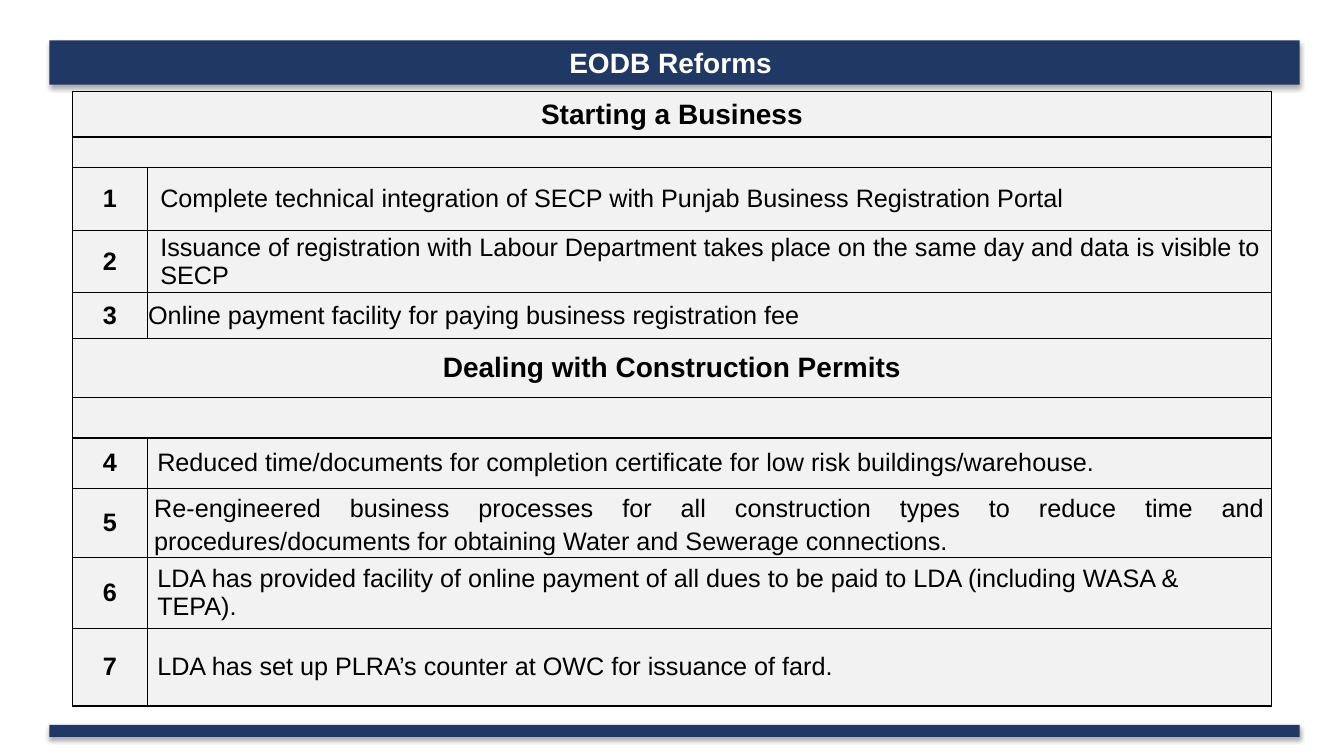
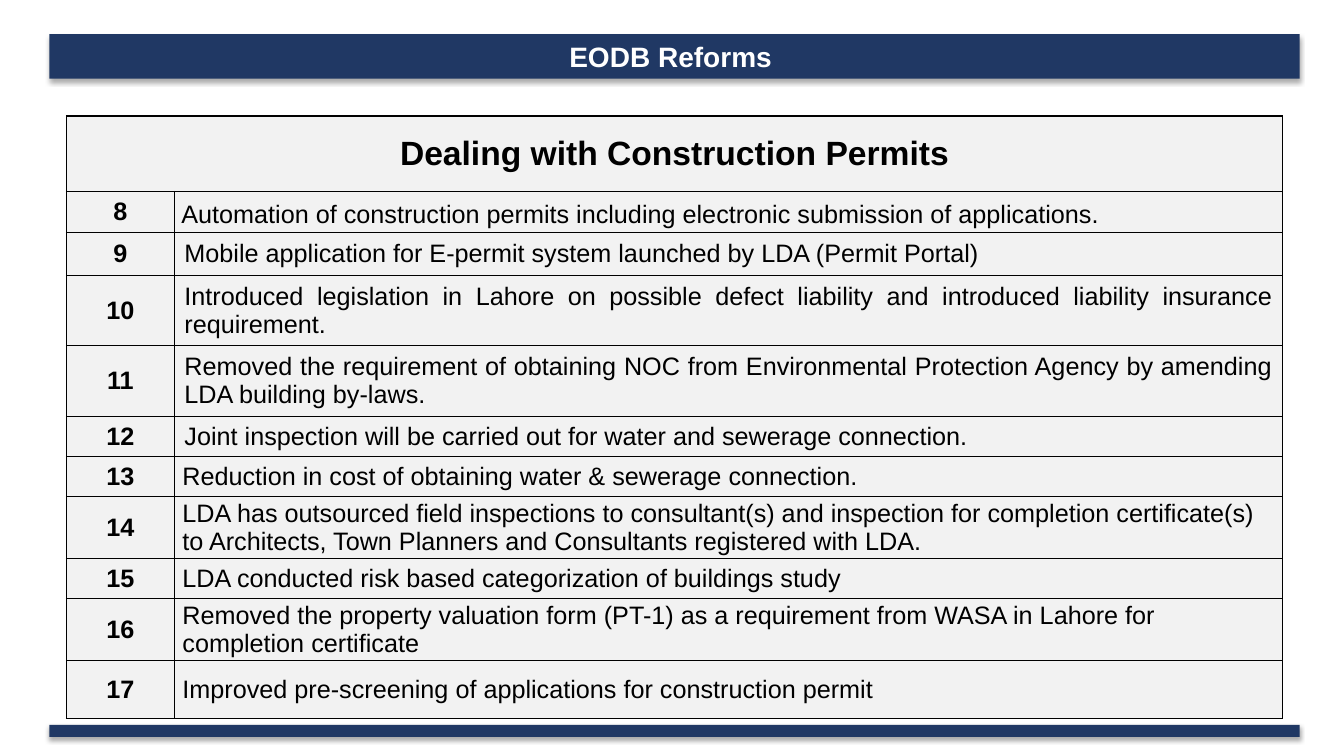
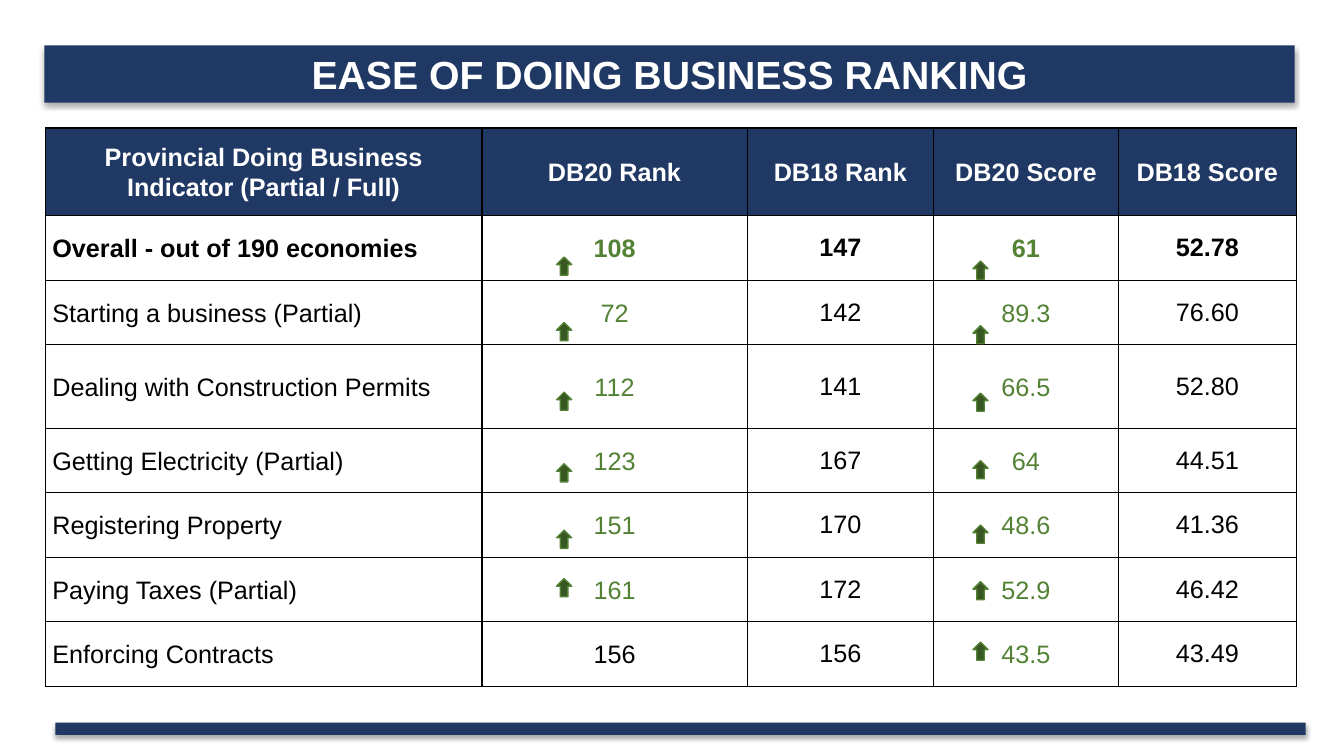
from lxml import etree
from pptx import Presentation
from pptx.dml.color import RGBColor
from pptx.enum import shapes, text
from pptx.oxml import parse_xml
from pptx.oxml.ns import nsdecls
from pptx.util import Inches, Pt

NAVY = RGBColor(0x20, 0x38, 0x64)
GREY = RGBColor(0xF2, 0xF2, 0xF2)
GREEN = RGBColor(0x54, 0x82, 0x35)
DARK = RGBColor(0x38, 0x57, 0x23)
WHITE = RGBColor(0xFF, 0xFF, 0xFF)
BLACK = RGBColor(0, 0, 0)
FONT = "Arial"
BAND_W = 12.4

LEFT, MID, JUST = text.PP_ALIGN.LEFT, text.PP_ALIGN.CENTER, text.PP_ALIGN.JUSTIFY

# Cell styles: left inset, right inset, alignment, line spacing
PLAIN = (0.1, 0.1, LEFT, 1.0)
FULL = (0.1, 0.1, JUST, 1.0)
LOOSE = (0.07, 0.07, JUST, 1.15)
DEEP = (0.13, 0.01, LEFT, 1.0)
FLUSH = (0.01, 0.01, LEFT, 1.0)
SLIM = (0.08, 0.01, LEFT, 1.0)
NUMBER = (0.1, 0.1, MID, 1.0)
HEAD = (0.05, 0.05, MID, 1.0)
LABEL = (0.07, 0.07, LEFT, 1.07)
VALUE = (0.07, 0.07, MID, 1.07)

# Rows: height, then a heading, nothing, or a reform with its style
STARTING = [
    (0.45, "Starting a Business"),
    (0.3,),
    (0.62, "Complete technical integration of SECP with Punjab Business Registration Portal", DEEP),
    (0.62, "Issuance of registration with Labour Department takes place on the same day "
           "and data is visible to SECP", DEEP),
    (0.45, "Online payment facility for paying business registration fee", FLUSH),
    (0.59, "Dealing with Construction Permits"),
    (0.4,),
    (0.5, "Reduced time/documents for completion certificate for low risk "
          "buildings/warehouse.", PLAIN),
    (0.69, "Re-engineered business processes for all construction types to reduce time and "
           "procedures/documents for obtaining Water and Sewerage connections.", LOOSE),
    (0.7, "LDA has provided facility of online payment of all dues to be paid to LDA "
          "(including WASA & TEPA).", PLAIN),
    (0.77, "LDA has set up PLRA’s counter at OWC for issuance of fard.", PLAIN),
]
PERMITS = [
    (0.75, "Dealing with Construction Permits"),
    (0.41, "Automation of construction permits including electronic submission of "
           "applications.", LOOSE),
    (0.42, "Mobile application for E-permit system launched by LDA (Permit Portal)", PLAIN),
    (0.7, "Introduced legislation in Lahore on possible defect liability and introduced "
          "liability insurance requirement.", FULL),
    (0.7, "Removed the requirement of obtaining NOC from Environmental Protection Agency "
          "by amending LDA building by-laws.", FULL),
    (0.4, "Joint inspection will be carried out for water and sewerage connection.", FULL),
    (0.4, "Reduction in cost of obtaining water & sewerage connection.", SLIM),
    (0.61, "LDA has outsourced field inspections to consultant(s) and inspection for completion "
           "certificate(s) to Architects, Town Planners and Consultants registered with LDA.", SLIM),
    (0.4, "LDA conducted risk based categorization of buildings study", SLIM),
    (0.61, "Removed the property valuation form (PT-1) as a requirement from WASA in Lahore "
           "for completion certificate", SLIM),
    (0.58, "Improved pre-screening of applications for construction permit", SLIM),
]
RANKING = [
    ("Provincial Doing Business Indicator (Partial / Full)",
     "DB20 Rank", "DB18 Rank", "DB20 Score", "DB18 Score"),
    ("Overall - out of 190 economies", "108", "147", "61", "52.78"),
    ("Starting a business (Partial)", "72", "142", "89.3", "76.60"),
    ("Dealing with Construction Permits", "112", "141", "66.5", "52.80"),
    ("Getting Electricity (Partial)", "123", "167", "64", "44.51"),
    ("Registering Property", "151", "170", "48.6", "41.36"),
    ("Paying Taxes (Partial)", "161", "172", "52.9", "46.42"),
    ("Enforcing Contracts", "156", "156", "43.5", "43.49"),
]
ARROWS = {
    5.52: [2.55, 3.2, 3.89, 4.6, 5.26, 5.74],
    9.65: [2.59, 3.23, 3.9, 4.57, 5.21, 5.77, 6.37],
}


def write(para, words, size, color, bold):
    run = para.add_run()
    run.text = words
    font = run.font
    font.name, font.size, font.bold = FONT, Pt(size), bold
    font.color.rgb = color


def band(slide, left, top, height):
    """Add a navy bar with a soft shadow below it."""
    bar = slide.shapes.add_shape(shapes.MSO_SHAPE.RECTANGLE, Inches(left), Inches(top),
                                 Inches(BAND_W), Inches(height))
    bar.fill.solid()
    bar.fill.fore_color.rgb = NAVY
    bar.line.fill.background()
    bar.shadow.inherit = False
    glow = parse_xml(
        f'<a:outerShdw {nsdecls("a")} blurRad="{Pt(3.5)}" dist="{Pt(2.2)}" dir="5400000" '
        'rotWithShape="0"><a:srgbClr val="000000"><a:alpha val="32000"/></a:srgbClr></a:outerShdw>')
    bar.element.spPr.find("{*}effectLst").append(glow)
    return bar


def title(slide, words, left, top, height, size):
    frame = band(slide, left, top, height).text_frame
    frame.word_wrap = True
    frame.vertical_anchor = text.MSO_ANCHOR.MIDDLE
    para = frame.paragraphs[0]
    para.alignment = MID
    write(para, words, size, WHITE, True)


def border(cell):
    props = cell._tc.get_or_add_tcPr()
    for i, side in enumerate("LRTB"):
        line = parse_xml(f'<a:ln{side} {nsdecls("a")} w="{Pt(1)}"><a:solidFill>'
                         f'<a:srgbClr val="{BLACK}"/></a:solidFill></a:ln{side}>')
        props.insert(i, line)


def grid(slide, left, top, cols, rows):
    """Add a bordered table without fill from column widths and row heights."""
    frame = slide.shapes.add_table(len(rows), len(cols), Inches(left), Inches(top),
                                   Inches(sum(cols)), Inches(sum(rows)))
    table = frame.table
    table.first_row = table.horz_banding = False
    for col, width in zip(table.columns, cols):
        col.width = Inches(width)
    for row, height in zip(table.rows, rows):
        row.height = Inches(height)
    for cell in table.iter_cells():
        cell.fill.background()
        cell.margin_top = cell.margin_bottom = 0
        cell.vertical_anchor = text.MSO_ANCHOR.MIDDLE
        border(cell)
    return table


def paint(cell, color):
    cell.fill.solid()
    cell.fill.fore_color.rgb = color


def fill(cell, words, style, size=18, color=BLACK, bold=False):
    """Write words into a cell in one of the cell styles."""
    left, right, align, space = style
    cell.margin_left, cell.margin_right = Inches(left), Inches(right)
    para = cell.text_frame.paragraphs[0]
    para.alignment, para.line_spacing = align, space
    write(para, words, size, color, bold)


def reforms(slide, left, top, cols, rows, first, size):
    """Add a table of reforms, numbered from first, under headings."""
    table = grid(slide, left, top, cols, [row[0] for row in rows])
    for cell in table.iter_cells():
        paint(cell, GREY)
    count = first
    for i, (_, *parts) in enumerate(rows):
        start, end = table.cell(i, 0), table.cell(i, 1)
        if len(parts) == 2:
            fill(start, str(count), NUMBER, bold=True)
            fill(end, *parts)
            count += 1
            continue
        start.merge(end)
        if parts:
            fill(start, parts[0], HEAD, size, bold=True)


def ranking(slide):
    heights = [0.87, 0.64, 0.64, 0.83] + [0.64] * 4
    table = grid(slide, 0.45, 1.27, [4.33, 2.63, 1.85, 1.83, 1.77], heights)
    for i, row in enumerate(RANKING):
        for j, words in enumerate(row):
            cell = table.cell(i, j)
            if i == 0:
                paint(cell, NAVY)
                fill(cell, words, VALUE, color=WHITE, bold=True)
                continue
            better = j in (1, 3) and words != row[j + 1]
            style = LABEL if j == 0 else VALUE if j in (1, 3) else NUMBER
            fill(cell, words, style, color=GREEN if better else BLACK, bold=i == 1)


def arrow(slide, left, top):
    mark = slide.shapes.add_shape(shapes.MSO_SHAPE.UP_ARROW, Inches(left), Inches(top),
                                  Inches(0.15), Inches(0.18))
    mark.fill.solid()
    mark.fill.fore_color.rgb = DARK
    mark.line.color.rgb = GREEN
    mark.line.width = Pt(1)
    mark.shadow.inherit = False


def main():
    deck = Presentation()
    deck.slide_width, deck.slide_height = Inches(13.33), Inches(7.5)
    blank = deck.slide_layouts[6]
    one, two, three = [deck.slides.add_slide(blank) for _ in range(3)]

    title(one, "EODB Reforms ", 0.49, 0.4, 0.44, 20)
    band(one, 0.49, 7.19, 0.12)
    reforms(one, 0.72, 0.91, [0.74, 11.15], STARTING, 1, 20)

    title(two, "EODB Reforms ", 0.49, 0.34, 0.44, 20)
    reforms(two, 0.66, 1.15, [1.07, 10.99], PERMITS, 8, 24)
    band(two, 0.49, 7.19, 0.12)

    title(three, " EASE OF DOING BUSINESS RANKING ", 0.44, 0.45, 0.57, 28)
    band(three, 0.55, 7.17, 0.12)
    ranking(three)
    for left, tops in ARROWS.items():
        for top in tops:
            arrow(three, left, top)

    deck.save("out.pptx")


if __name__ == "__main__":
    main()
